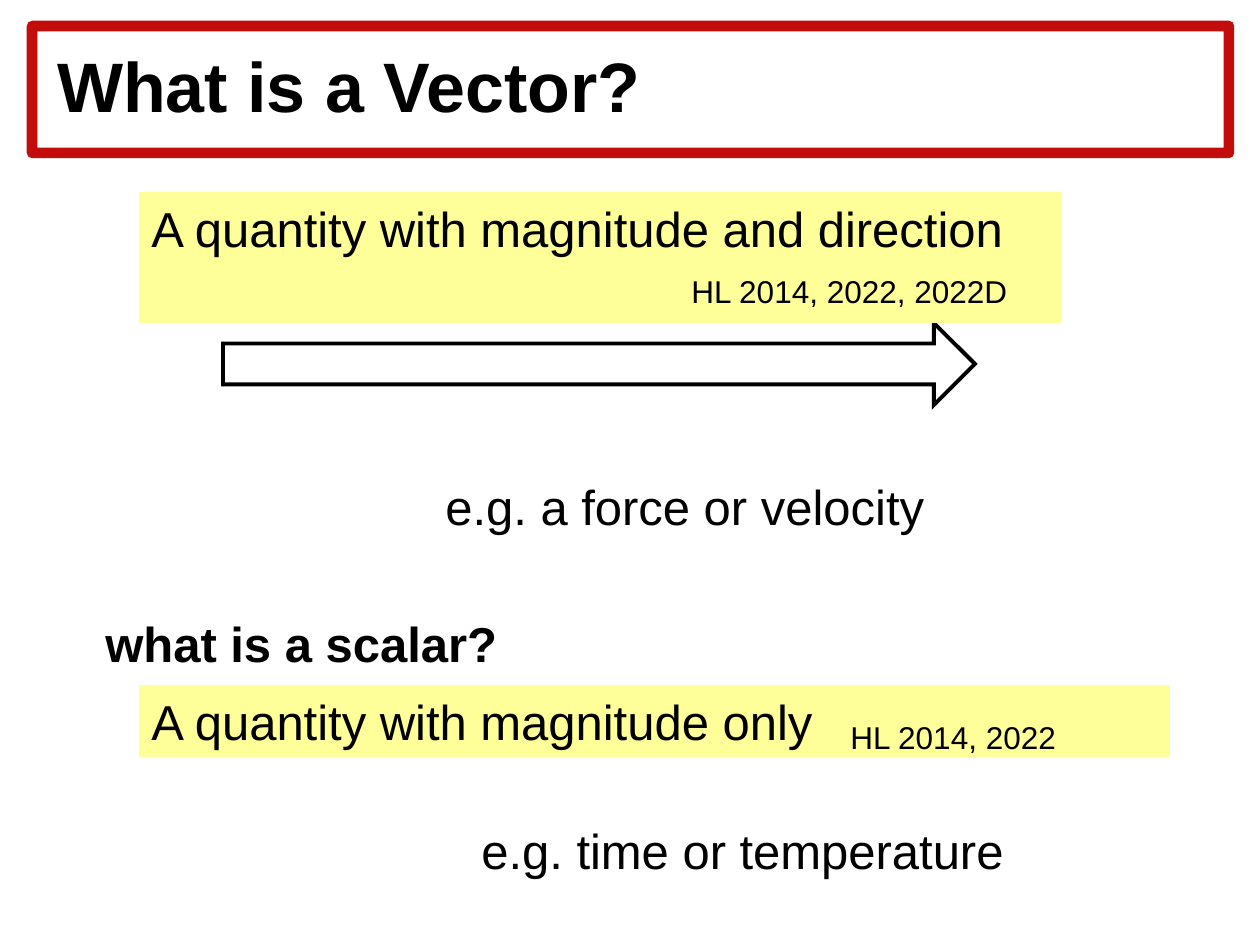
"""Build a slide that defines vectors and scalars."""
from lxml import etree
from pptx import Presentation
from pptx import util as u
from pptx.dml.color import RGBColor
from pptx.enum import shapes, text
from pptx.oxml import ns

PX = 914400 / 126
THEME = {
    "font": "Arial", "ink": "000000", "paper": "FFFFFF", "note": "FFFF99",
    "frame": "C00000", "title": 40, "body": 28, "small": 18,
}
TITLE = ("What is a Vector?", (32, 26, 1197, 127))
ARROW = (223, 323, 752, 82)
BOXES = [
    ("A quantity with magnitude and direction", (139, 192, 923, 131),
     {"fill": "note", "wrap": True}),
    ("e.g. a force or velocity", (433, 470, 510, 72), {}),
    ("what is a scalar?", (93, 607, 422, 72), {"fill": "paper", "bold": True}),
    ("A quantity with magnitude only", (139, 685, 1031, 72),
     {"fill": "note", "wrap": True}),
    ("e.g. time or temperature", (469, 814, 554, 72), {"after": 12}),
    ("HL 2014, 2022, 2022D", (679, 266, 344, 50), {"size": "small", "after": 12}),
    ("HL 2014, 2022", (838, 712, 233, 50), {"size": "small", "after": 12}),
]


def emu(box):
    return [u.Emu(round(n * PX)) for n in box]


def rgb(name):
    return RGBColor.from_string(THEME[name])


def paint(s, name):
    s.fill.solid()
    s.fill.fore_color.rgb = rgb(name)


def outline(s, color, width, join, alpha=None):
    s.line.color.rgb = rgb(color)
    s.line.width = u.Pt(width)
    ln = s.line._get_or_add_ln()
    etree.SubElement(ln, ns.qn(f"a:{join}"))
    if alpha:
        clr = ln.find(".//" + ns.qn("a:srgbClr"))
        etree.SubElement(clr, ns.qn("a:alpha"), val=str(alpha * 1000))


def write(s, words, size="body", bold=False, wrap=False, after=0, spacing=None,
          anchor=text.MSO_ANCHOR.TOP, inset=None):
    tf = s.text_frame
    tf.auto_size = text.MSO_AUTO_SIZE.NONE
    tf.word_wrap = wrap
    tf.vertical_anchor = anchor
    if inset is not None:
        tf.margin_left = tf.margin_right = inset
        tf.margin_top = tf.margin_bottom = inset
    p = tf.paragraphs[0]
    p.alignment = text.PP_ALIGN.LEFT
    p.space_after = u.Pt(after)
    p.line_spacing = spacing
    r = p.add_run()
    r.text = words
    r.font.name = THEME["font"]
    r.font.size = u.Pt(THEME[size])
    r.font.bold = bold
    r.font.color.rgb = rgb("ink")


def add_box(slide, words, box, fill=None, **fmt):
    if fill:
        s = slide.shapes.add_shape(shapes.MSO_SHAPE.RECTANGLE, *emu(box))
        s.shadow.inherit = False
        paint(s, fill)
        s.line.fill.background()
    else:
        s = slide.shapes.add_textbox(*emu(box))
    write(s, words, **fmt)


def add_title(slide):
    words, box = TITLE
    s = slide.shapes.title
    s.left, s.top, s.width, s.height = emu(box)
    outline(s, "frame", 6, "round", alpha=95)
    write(s, words, size="title", bold=True, wrap=True, spacing=0.9,
          anchor=text.MSO_ANCHOR.MIDDLE, inset=u.Inches(0.2))


def add_arrow(slide):
    s = slide.shapes.add_shape(shapes.MSO_SHAPE.RIGHT_ARROW, *emu(ARROW))
    s.shadow.inherit = False
    paint(s, "paper")
    outline(s, "ink", 2.25, "miter")


def main():
    prs = Presentation()
    prs.slide_width, prs.slide_height = emu((1260, 945))
    slide = prs.slides.add_slide(prs.slide_layouts[5])
    add_title(slide)
    add_arrow(slide)
    for words, box, fmt in BOXES:
        add_box(slide, words, box, **fmt)
    prs.save("out.pptx")


if __name__ == "__main__":
    main()
